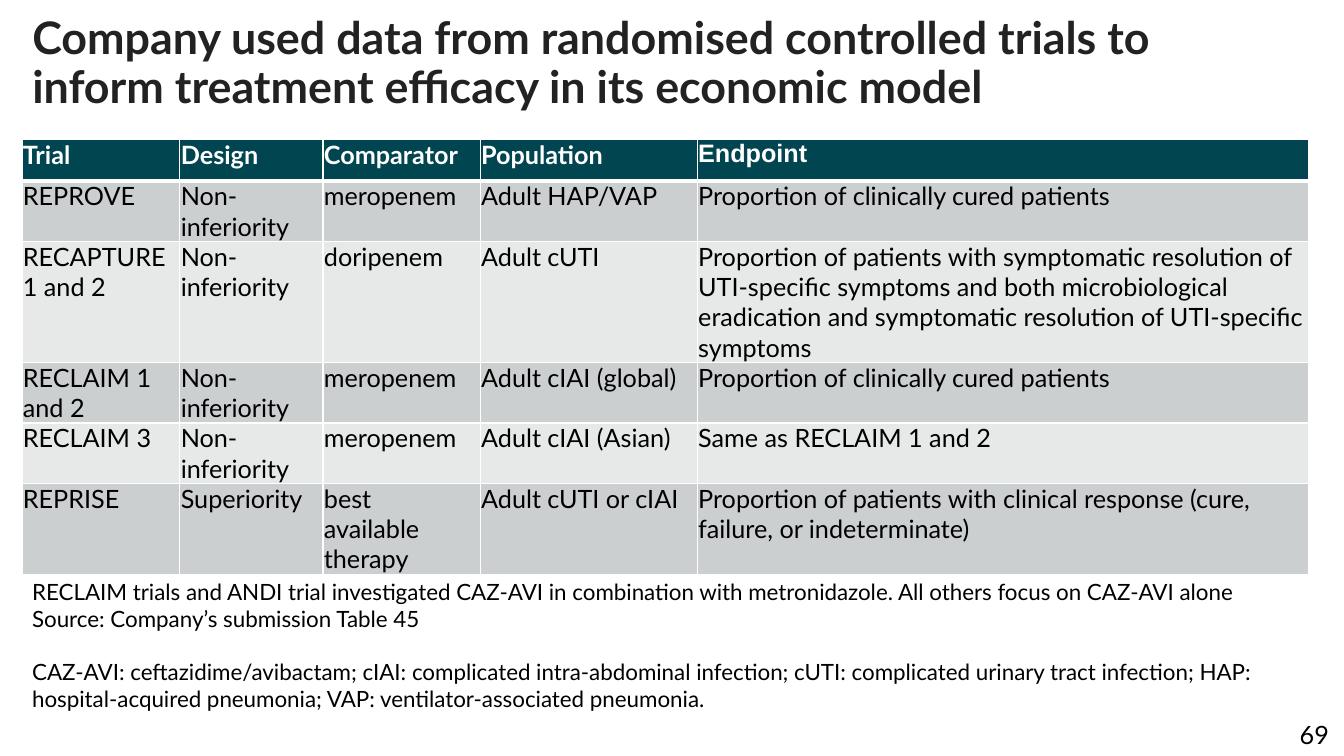
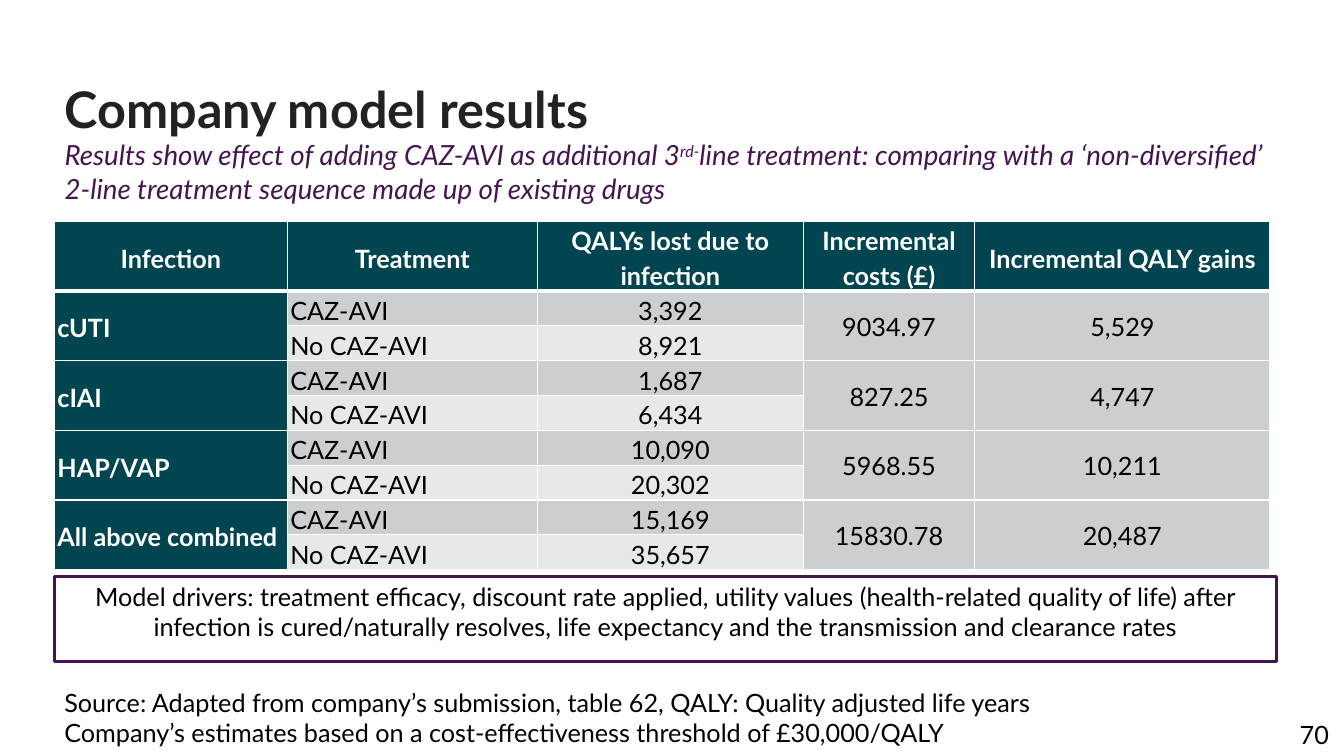
from dataclasses import dataclass

from lxml import etree
from pptx import Presentation
from pptx.dml.color import RGBColor
from pptx.enum.shapes import MSO_SHAPE
from pptx.enum.text import MSO_ANCHOR, MSO_AUTO_SIZE, PP_ALIGN
from pptx.oxml.ns import qn
from pptx.util import Inches, Pt

LEFT, MID, RIGHT = PP_ALIGN.LEFT, PP_ALIGN.CENTER, PP_ALIGN.RIGHT
TOP, MIDDLE = MSO_ANCHOR.TOP, MSO_ANCHOR.MIDDLE
RECT, FIXED = MSO_SHAPE.RECTANGLE, MSO_AUTO_SIZE.NONE

WIDE, HIGH = Inches(13.33), Inches(7.5)
COLOURS = {"ink": "222222", "black": "000000", "white": "FFFFFF", "teal": "004550",
           "plum": "451550", "dark": "CCCFD0", "light": "E7E9E9"}

# Font values, then the colour name under "hue"
FONTS = {
    "title": {"name": "Lato", "size": Pt(32), "bold": True, "hue": "ink"},
    "big": {"name": "Lato", "size": Pt(36), "bold": True, "hue": "ink"},
    "sub": {"name": "Lato", "size": Pt(19.8), "bold": False, "italic": True, "hue": "plum"},
    "text": {"name": "Lato", "size": Pt(18), "bold": False, "hue": "black"},
    "note": {"name": "Lato", "size": Pt(16), "bold": False, "hue": "black"},
    "head": {"name": "Lato", "size": Pt(18), "bold": True, "hue": "white"},
    "arial": {"name": "Arial", "size": Pt(18), "bold": True, "hue": "white"},
}

# Paragraph values
FLOWS = {
    "plain": {"alignment": LEFT},
    "tight": {"alignment": LEFT, "line_spacing": 0.9},
    "gap": {"alignment": LEFT, "space_before": Pt(19.2)},
    "mid": {"alignment": MID},
    "right": {"alignment": RIGHT},
    "cell": {"alignment": LEFT, "space_after": Pt(3)},
    "side": {"alignment": LEFT, "line_spacing": 1.15, "space_before": Pt(2), "space_after": Pt(2)},
    "count": {"alignment": MID, "line_spacing": 1.15, "space_before": Pt(2), "space_after": Pt(2)},
    "total": {"alignment": MID, "line_spacing": 1.07, "space_after": Pt(8)},
}


@dataclass
class Box:
    """Place and size in percent of the slide's width and height."""
    left: float
    top: float
    width: float
    height: float

    def spot(self) -> tuple[int, int, int, int]:
        return across(self.left), down(self.top), across(self.width), down(self.height)


@dataclass
class Run:
    text: str
    font: str = "text"
    base: int = 0


@dataclass
class Para:
    runs: list[Run]
    flow: str = "plain"


@dataclass
class Grid:
    """A table: column widths and row heights in percent of the slide."""
    left: float
    top: float
    cols: list[float]
    rows: list[float]
    inset: float
    anchor: MSO_ANCHOR


@dataclass
class Cell:
    """A table cell; pad is extra room on its right in inches."""
    para: Para
    fill: str
    span: int = 1
    pad: float = 0


def across(share: float) -> int:
    return round(WIDE * share / 100)


def down(share: float) -> int:
    return round(HIGH * share / 100)


def rgb(hue: str) -> RGBColor:
    return RGBColor.from_string(COLOURS[hue])


def write(frame, paras: list[Para]) -> None:
    for i, para in enumerate(paras):
        line = frame.paragraphs[0] if i == 0 else frame.add_paragraph()
        for key, value in FLOWS[para.flow].items():
            setattr(line, key, value)
        for part in para.runs:
            run = line.add_run()
            run.text = part.text
            for key, value in FONTS[part.font].items():
                if key == "hue":
                    run.font.color.rgb = rgb(value)
                else:
                    setattr(run.font, key, value)
            if part.base:
                run.font._element.set("baseline", str(part.base * 1000))


def fit(shape, paras: list[Para]) -> None:
    frame = shape.text_frame
    for key, value in {"word_wrap": True, "auto_size": FIXED, "vertical_anchor": TOP}.items():
        setattr(frame, key, value)
    write(frame, paras)


def add_text(slide, box: Box, paras: list[Para]) -> None:
    fit(slide.shapes.add_textbox(*box.spot()), paras)


def add_panel(slide, box: Box, paras: list[Para], fill: str = "", edge: str = "") -> None:
    """Add a rectangle with text, filled or outlined where a colour is given."""
    shape = slide.shapes.add_shape(RECT, *box.spot())
    shape.shadow.inherit = False
    for part, hue in ((shape.fill, fill), (shape.line.fill, edge)):
        if hue:
            part.solid()
            part.fore_color.rgb = rgb(hue)
        else:
            part.background()
    if edge:
        shape.line.width = Pt(2.25)
    fit(shape, paras)


def add_page(deck, number: int, box: Box, title: list[Para]):
    """Add a slide with its title and page number."""
    slide = deck.slides.add_slide(deck.slide_layouts[5])
    head = slide.shapes.title
    head.left, head.top, head.width, head.height = box.spot()
    fit(head, title)
    add_text(slide, Box(85.82, 94.53, 13.8, 5.33), [Para([Run(str(number))], "right")])
    return slide


def rule(cell, foot: float) -> None:
    """Draw white cell borders, the bottom one of its own weight."""
    props = cell._tc.get_or_add_tcPr()
    for side, weight in {"lnL": 1, "lnR": 1, "lnT": 1, "lnB": foot}.items():
        line = etree.SubElement(props, qn("a:" + side), w=str(Pt(weight)))
        fill = etree.SubElement(line, qn("a:solidFill"))
        etree.SubElement(fill, qn("a:srgbClr"), val=COLOURS["white"])


def add_grid(slide, grid: Grid, rows: list[list[Cell | None]]) -> None:
    box = Box(grid.left, grid.top, sum(grid.cols), sum(grid.rows))
    table = slide.shapes.add_table(len(rows), len(grid.cols), *box.spot()).table
    for col, share in zip(table.columns, grid.cols):
        col.width = across(share)
    for row, share in zip(table.rows, grid.rows):
        row.height = down(share)
    look = {"margin_left": Inches(grid.inset), "margin_right": Inches(grid.inset),
            "margin_top": 0, "margin_bottom": 0, "vertical_anchor": grid.anchor}
    for r, row in enumerate(rows):
        for c, item in enumerate(row):
            cell = table.cell(r, c)
            for key, value in look.items():
                setattr(cell, key, value)
            rule(cell, 3 if r == 0 else 1)
            if item is None:
                continue
            cell.margin_right = Inches(grid.inset + item.pad)
            cell.fill.solid()
            cell.fill.fore_color.rgb = rgb(item.fill)
            write(cell.text_frame, [item.para])
            if item.span > 1:
                cell.merge(table.cell(r + item.span - 1, c))


def make(text: str, font: str, flow: str, fill: str, span: int = 1) -> Cell:
    return Cell(Para([Run(text, font)], flow), fill, span)


TRIALS = [
    ("REPROVE", "Non-inferiority", "meropenem", "Adult HAP/VAP",
     "Proportion of clinically cured patients"),
    ("RECAPTURE 1 and 2", "Non-inferiority", "doripenem", "Adult cUTI",
     "Proportion of patients with symptomatic resolution of UTI-specific symptoms and both "
     "microbiological eradication and symptomatic resolution of UTI-specific symptoms"),
    ("RECLAIM 1 and 2", "Non-inferiority", "meropenem", "Adult cIAI (global)",
     "Proportion of clinically cured patients"),
    ("RECLAIM 3", "Non-inferiority", "meropenem", "Adult cIAI (Asian)",
     "Same as RECLAIM 1 and 2"),
    ("REPRISE", "Superiority", "best available therapy", "Adult cUTI or cIAI",
     "Proportion of patients with clinical response (cure, failure, or indeterminate)"),
]

# Infection, loss with and without the drug, costs, gains
RESULTS = [
    ("cUTI", "3,392", "8,921", "9034.97", "5,529"),
    ("cIAI", "1,687", "6,434", "827.25", "4,747"),
    ("HAP/VAP", "10,090", "20,302", "5968.55", "10,211"),
    ("All above combined", "15,169", "35,657", "15830.78", "20,487"),
]


def trial_page(deck) -> None:
    title = Run("Company used data from randomised controlled trials to inform treatment "
                "efficacy in its economic model", "title")
    slide = add_page(deck, 69, Box(1.65, 1.47, 90.92, 18.67), [Para([title], "tight")])
    add_panel(slide, Box(1.65, 75.8, 97.45, 19.33), [
        Para([Run("RECLAIM trials and ANDI trial investigated CAZ-AVI in combination with "
                  "metronidazole. All others focus on CAZ-AVI alone", "note")]),
        Para([Run("Source: Company’s submission Table 45", "note")]),
        Para([Run("CAZ-AVI: ceftazidime/avibactam; cIAI: complicated intra-abdominal infection; "
                  "cUTI: complicated urinary tract infection; HAP: hospital-acquired pneumonia; "
                  "VAP: ventilator-associated pneumonia.", "note")], "gap"),
    ], fill="white")
    heads = ("Trial", "Design", "Comparator", "Population", "Endpoint")
    rows = [[make(text, "arial" if text == "Endpoint" else "head", "cell", "teal")
             for text in heads]]
    for i, trial in enumerate(TRIALS):
        fill = "light" if i % 2 else "dark"
        rows.append([make(text, "text", "cell", fill) for text in trial])
    rows[-1][2].pad = 0.15
    grid = Grid(1.63, 18.47, [11.75, 10.65, 11.7, 16.15, 45.46], [5.47] * 6, 0.01, TOP)
    add_grid(slide, grid, rows)


def result_page(deck) -> None:
    slide = add_page(deck, 70, Box(4.05, 9.6, 90.92, 18.67), [
        Para([Run("Company model results", "big")]),
        Para([Run("Results show effect of adding CAZ-AVI as additional 3", "sub"),
              Run("rd-", "sub", 30),
              Run("line treatment: comparing with a ‘non-diversified’ 2-line treatment "
                  "sequence made up of existing drugs", "sub")]),
    ])
    add_text(slide, Box(4.05, 90.2, 88.97, 9.47), [
        Para([Run("Source: Adapted from company’s submission, table 62, QALY: Quality "
                  "adjusted life years")]),
        Para([Run("Company’s estimates based on a cost-effectiveness threshold of "
                  "£30,000/QALY")]),
    ])
    add_panel(slide, Box(4.05, 76.27, 90.92, 11.2), [
        Para([Run("Model drivers: treatment efficacy, discount rate applied, utility values "
                  "(health-related quality of life) after infection is cured/naturally resolves, "
                  "life expectancy and the transmission and clearance rates")], "mid"),
    ], edge="plum")
    heads = ("Infection", "Treatment", "QALYs lost due to infection",
             "Incremental costs (£)", "Incremental QALY gains")
    rows = [[make(text, "head", "count", "teal") for text in heads]]
    for name, less, more, cost, gain in RESULTS:
        rows.append([make(name, "head", "side", "teal", 2),
                     make("CAZ-AVI", "text", "side", "dark"),
                     make(less, "text", "count", "dark"),
                     make(cost, "text", "total", "dark", 2),
                     make(gain, "text", "total", "dark", 2)])
        rows.append([None, make("No CAZ-AVI", "text", "side", "light"),
                     make(more, "text", "count", "light"), None, None])
    grid = Grid(4.05, 29.3, [17.33, 18.6, 19.8, 12.75, 21.98],
                [7.87] + [3.73] * 7 + [4.67], 0.03, MIDDLE)
    add_grid(slide, grid, rows)


def main() -> None:
    deck = Presentation()
    deck.slide_width, deck.slide_height = WIDE, HIGH
    trial_page(deck)
    result_page(deck)
    deck.save("out.pptx")


if __name__ == "__main__":
    main()
